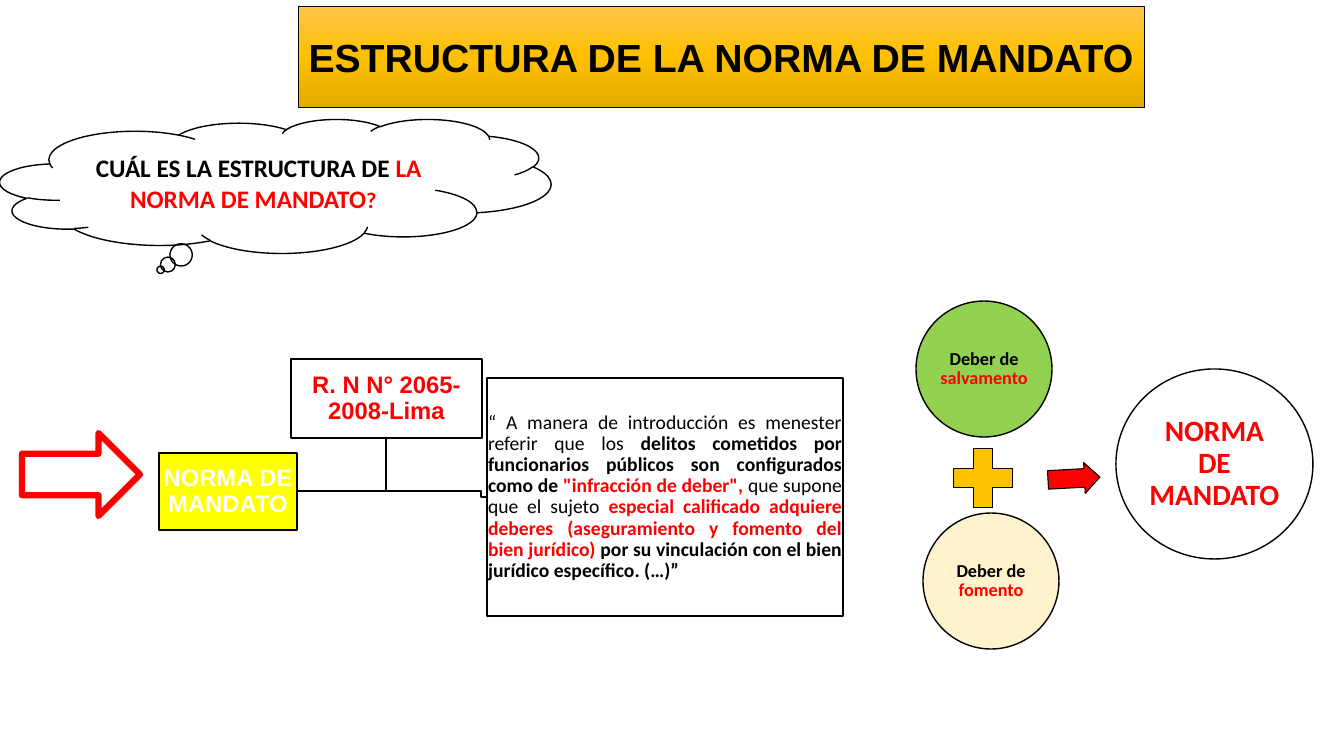
from copy import deepcopy
from pptx import Presentation
from pptx.dml.color import RGBColor
from pptx.enum.shapes import MSO_SHAPE
from pptx.enum.text import MSO_ANCHOR, PP_ALIGN
from pptx.util import Emu, Pt

BLACK = RGBColor(0x00, 0x00, 0x00)
WHITE = RGBColor(0xFF, 0xFF, 0xFF)
RED = RGBColor(0xFF, 0x00, 0x00)
YELLOW = RGBColor(0xFF, 0xFF, 0x00)
GREEN = RGBColor(0x92, 0xD0, 0x50)
CREAM = RGBColor(0xFF, 0xF2, 0xCC)
GOLD = RGBColor(0xFF, 0xC0, 0x00)
LIGHT_GOLD = RGBColor(0xFF, 0xC6, 0x4B)
DARK_GOLD = RGBColor(0xE3, 0xAB, 0x00)
EMU_PER_PX = 914400 / 100.8

TITLE = [("ESTRUCTURA DE LA NORMA DE MANDATO", BLACK, True)]
QUESTION = [
    (" CUÁL ES LA ESTRUCTURA DE ", BLACK, True),
    ("LA NORMA DE MANDATO", RED, True),
    ("? ", RED, True, 16),
]
RESCUE = [("Deber de ", BLACK, True), ("salvamento", RED, True)]
PROMOTION = [("Deber de ", BLACK, True), ("fomento", RED, True)]
RESULT = [("NORMA DE MANDATO", RED, True)]
NORM = [("NORMA DE MANDATO", WHITE, True)]
RULING = [("R. N N° 2065-2008-Lima", RED, True)]
QUOTE = [
    ("“ A manera de introducción es menester referir que los ", BLACK, False),
    ("delitos cometidos por funcionarios públicos son configurados como de ", BLACK, True),
    ('"infracción de deber", ', RED, True),
    ("que supone que el sujeto ", BLACK, False),
    ("especial calificado adquiere deberes (aseguramiento y fomento del bien jurídico) ", RED, True),
    ("por su vinculación con el bien jurídico específico. (…)”", BLACK, True),
]
BRANCHES = [
    [(297, 491), (386, 491), (386, 437)],
    [(297, 491), (481, 491), (481, 497), (487, 497)],
]


def px(n):
    return Emu(round(n * EMU_PER_PX))


def set_line(sp, color=BLACK, width=1):
    sp.shadow.inherit = False
    sp.line.color.rgb = color
    sp.line.width = Pt(width)


def add_box(kind, box, fill=None, line=BLACK, width=1):
    sp = s.shapes.add_shape(kind, *map(px, box))
    set_line(sp, line, width)
    if fill is None:
        sp.fill.background()
    else:
        sp.fill.solid()
        sp.fill.fore_color.rgb = fill
    return sp


def add_text(sp, runs, size, font="Calibri", align=PP_ALIGN.CENTER, spacing=0.9, inset=(1, 1)):
    tf = sp.text_frame
    tf.word_wrap = True
    tf.vertical_anchor = MSO_ANCHOR.MIDDLE
    tf.margin_left = tf.margin_right = px(inset[0])
    tf.margin_top = tf.margin_bottom = px(inset[1])
    p = tf.paragraphs[0]
    p.alignment = align
    p.line_spacing = spacing
    for text, color, bold, *own_size in runs:
        r = p.add_run()
        r.text = text
        r.font.name = font
        r.font.size = Pt(own_size[0] if own_size else size)
        r.font.bold = bold
        r.font.color.rgb = color


def set_gradient(sp, colors):
    fill = sp.fill
    fill.gradient()
    fill.gradient_angle = 270
    first = fill.gradient_stops[0]._gs
    first.addnext(deepcopy(first))
    for i, (stop, color) in enumerate(zip(fill.gradient_stops, colors)):
        stop.position = i / (len(colors) - 1)
        stop.color.rgb = color


prs = Presentation()
prs.slide_width, prs.slide_height = px(1344), px(756)
s = prs.slides.add_slide(prs.slide_layouts[6])

cloud = add_box(MSO_SHAPE.CLOUD_CALLOUT, (0, 119, 551, 134))
add_text(cloud, QUESTION, 18, spacing=1.0, inset=(10, 5))

title = add_box(MSO_SHAPE.RECTANGLE, (298, 6, 846, 101), width=0.5)
set_gradient(title, [LIGHT_GOLD, GOLD, DARK_GOLD])
add_text(title, TITLE, 28, "Arial", spacing=1.0, inset=(10, 5))

for box, fill, runs, size, inset in [
    ((916, 301, 136, 136), GREEN, RESCUE, 13, (2, 2)),
    ((923, 513, 136, 136), CREAM, PROMOTION, 13, (2, 2)),
    ((1116, 369, 197, 190), WHITE, RESULT, 21, (3, 3)),
]:
    add_text(add_box(MSO_SHAPE.OVAL, box, fill), runs, size, inset=inset)

add_box(MSO_SHAPE.MATH_PLUS, (943, 438, 80, 80), GOLD, width=0.75)
leads_to = add_box(MSO_SHAPE.RIGHT_ARROW, (1048, 463, 52, 31), RED, width=0.75)
leads_to.rotation = 356.9
leads_to.adjustments[0] = 0.6

for start, *rest in BRANCHES:
    builder = s.shapes.build_freeform(*start, scale=EMU_PER_PX)
    builder.add_line_segments(rest, close=False)
    branch = builder.convert_to_shape()
    branch.fill.background()
    set_line(branch)

for box, fill, runs, size, font, align in [
    ((159, 453, 138, 77), YELLOW, NORM, 17, "Arial", PP_ALIGN.CENTER),
    ((487, 378, 356, 238), WHITE, QUOTE, 14, "Calibri", PP_ALIGN.JUSTIFY),
    ((291, 359, 191, 79), WHITE, RULING, 17, "Arial", PP_ALIGN.CENTER),
]:
    add_text(add_box(MSO_SHAPE.RECTANGLE, box, fill), runs, size, font, align)

add_box(MSO_SHAPE.RIGHT_ARROW, (22, 433, 118, 83), WHITE, RED, 4.5)

prs.save("out.pptx")
